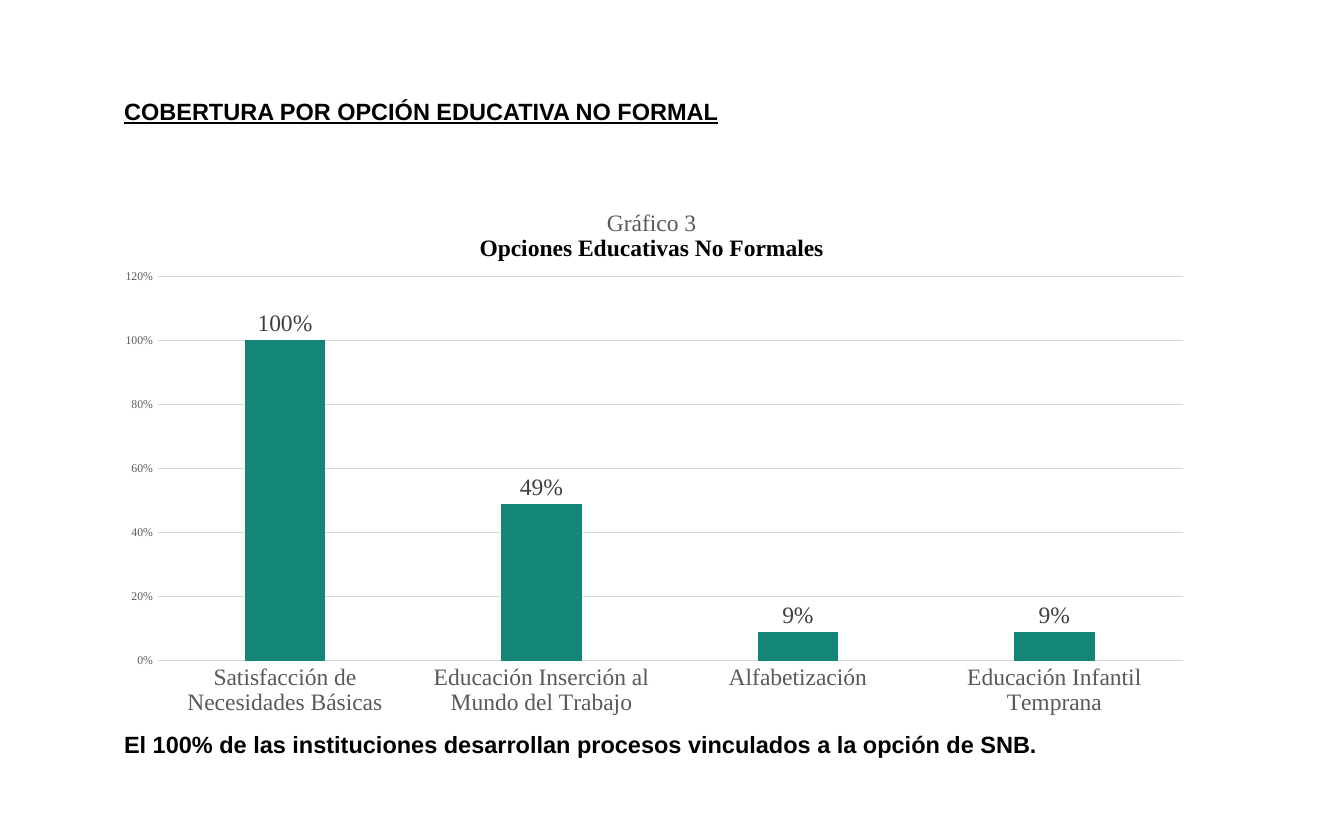
from lxml.etree import SubElement as Sub
from pptx import Presentation
from pptx.chart.data import CategoryChartData as Data
from pptx.dml.color import RGBColor
from pptx.enum.chart import XL_CHART_TYPE as Kind, XL_LABEL_POSITION as Spot, XL_TICK_MARK as Tick
from pptx.enum.text import MSO_ANCHOR as Anchor, PP_ALIGN as Align
from pptx.oxml.ns import qn
from pptx.util import Inches, Pt

BLACK = RGBColor(0, 0, 0)
GRAY = RGBColor(0x59, 0x59, 0x59)
DARK = RGBColor(0x40, 0x40, 0x40)
PALE = RGBColor(0xD9, 0xD9, 0xD9)
TEAL = RGBColor(0x13, 0x86, 0x77)
SERIF = "Times New Roman"


def style(font, size, color, name=SERIF, bold=False):
    font.name = name
    font.size = Pt(size)
    font.bold = bold
    font.color.rgb = color


def place(node, index, **spots):
    for old in node.findall(qn("c:layout")):
        node.remove(old)
    layout = Sub(node, qn("c:layout"))
    node.insert(index, layout)
    manual = Sub(layout, qn("c:manualLayout"))
    if "w" in spots:
        Sub(manual, qn("c:layoutTarget"), val="inner")
    for key in ("x", "y"):
        Sub(manual, qn(f"c:{key}Mode"), val="edge")
    for key, val in spots.items():
        Sub(manual, qn(f"c:{key}"), val=str(val))


deck = Presentation()
deck.slide_width = Inches(14.29)
deck.slide_height = Inches(8.9)
slide = deck.slides.add_slide(deck.slide_layouts[5])

head = slide.shapes.title
head.left, head.top = Inches(1.22), Inches(0.98)
head.width, head.height = Inches(8.68), Inches(0.4)
note = slide.shapes.add_textbox(Inches(1.22), Inches(7.71), Inches(10.32), Inches(0.4))
texts = (
    (head, "COBERTURA POR OPCIÓN EDUCATIVA NO FORMAL"),
    (note, "El 100% de las instituciones desarrollan procesos vinculados a la opción de SNB."),
)
for box, text in texts:
    frame = box.text_frame
    frame.text = text
    frame.word_wrap = True
    frame.vertical_anchor = Anchor.TOP
    para = frame.paragraphs[0]
    para.alignment = Align.LEFT
    style(para.font, 18, BLACK, "Arial", True)
head.text_frame.paragraphs[0].font.underline = True

data = Data(number_format="0%")
data.categories = [
    "Satisfacción de Necesidades Básicas",
    "Educación Inserción al Mundo del Trabajo",
    "Alfabetización",
    "Educación Infantil Temprana",
]
data.add_series("Series 1", (1, 0.49, 0.09, 0.09))
chart = slide.shapes.add_chart(
    Kind.COLUMN_CLUSTERED, Inches(1.08), Inches(1.96), Inches(11.73), Inches(5.76), data
).chart
style(chart.font, 10, BLACK)
chart.has_legend = False

chart.has_title = True
title = chart.chart_title
title.include_in_layout = False
frame = title.text_frame
frame.text = "Gráfico 3\nOpciones Educativas No Formales"
for para, color, bold in zip(frame.paragraphs, (GRAY, BLACK), (False, True)):
    style(para.font, 18, color, bold=bold)
    for run in para.runs:
        style(run.font, 18, color, bold=bold)
place(title._element, 1, x=0.34, y=0.04)

plot = chart.plots[0]
plot.gap_width = 219
plot.overlap = -27
plot.vary_by_categories = False
bars = plot.series[0]
bars.format.fill.solid()
bars.format.fill.fore_color.rgb = TEAL
plot.has_data_labels = True
labels = plot.data_labels
labels.show_value = True
labels.number_format = "0%"
labels.number_format_is_linked = False
labels.position = Spot.OUTSIDE_END
style(labels.font, 18, DARK)

cats, vals = chart.category_axis, chart.value_axis
for axis, size in ((cats, 18), (vals, 9)):
    axis.major_tick_mark = axis.minor_tick_mark = Tick.NONE
    style(axis.tick_labels.font, size, GRAY)
vals.minimum_scale, vals.maximum_scale, vals.major_unit = 0, 1.2, 0.2
vals.tick_labels.number_format = "0%"
vals.tick_labels.number_format_is_linked = False
vals.format.line.fill.background()
for line in (cats.format.line, vals.major_gridlines.format.line):
    line.color.rgb = PALE
    line.width = Pt(0.75)
area = chart._chartSpace.chart.plotArea
place(area, 0, x=0.05, y=0.17, w=0.93, h=0.71)

deck.save("out.pptx")
